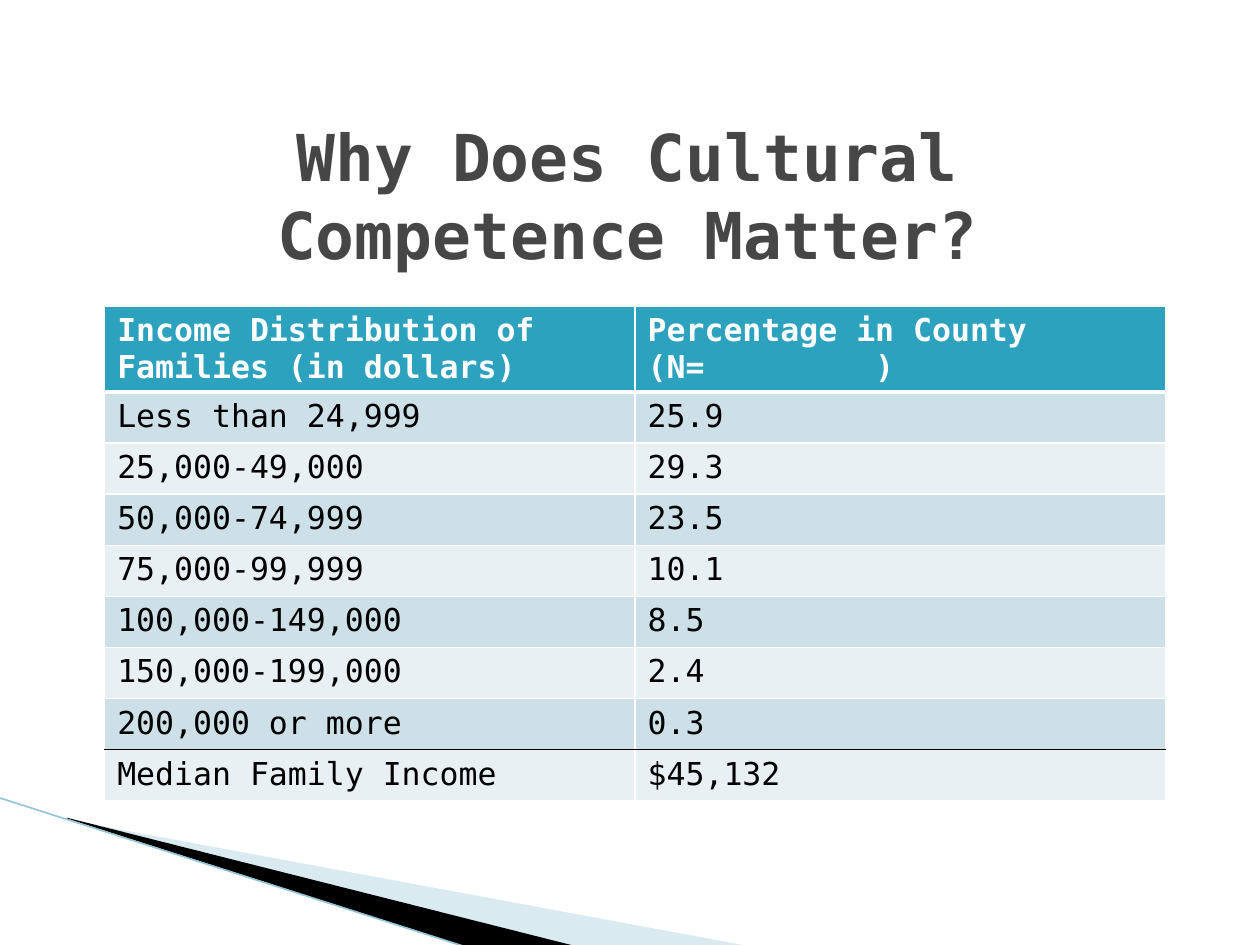
"""Build a slide with a table of family income by share of county."""

import dataclasses
import typing

import lxml.etree
import pptx
import pptx.dml.color
import pptx.enum.shapes
import pptx.enum.text
import pptx.oxml.ns
import pptx.util

Pt = pptx.util.Pt
qn = pptx.oxml.ns.qn
FONT = "DejaVu Sans Mono"
HUES = {
    "head": "2DA2BF",
    "dark": "CDE0E8",
    "light": "E8F0F4",
    "white": "FFFFFF",
    "black": "000000",
    "title": "464646",
    "pale": "A0CBDC",
    "line": "97C5D8",
}
HEADS = ("Income Distribution of Families (in dollars)", "Percentage in County\n(N=\t)")
ROWS = (
    ("Less than 24,999", "25.9"),
    ("25,000-49,000", "29.3"),
    ("50,000-74,999", "23.5"),
    ("75,000-99,999", "10.1"),
    ("100,000-149,000", "8.5"),
    ("150,000-199,000", "2.4"),
    ("200,000 or more", "0.3"),
    ("Median Family Income", "$45,132"),
)


@dataclasses.dataclass(frozen=True)
class Wedge:
    """A filled outline, with its points and its opacity in percent."""

    points: tuple
    hue: str
    alpha: int = 100


@dataclasses.dataclass(frozen=True)
class Edge:
    """A cell border: its side, hue and width in points."""

    side: str
    hue: str = "white"
    width: float = 1


WEDGES = (
    Wedge(((39.6, 468.7), (428.4, 540.7), (328.3, 540.7), (39.6, 468)), "pale", 40),
    Wedge(((38.2, 467.3), (329, 540.7), (267.8, 541.4), (38.9, 468)), "black"),
)


def tint(name: str) -> pptx.dml.color.RGBColor:
    """Return the named hue."""
    return pptx.dml.color.RGBColor.from_string(HUES[name])


def write(frame: typing.Any, text: str, *, size: float, hue: str, bold: bool = False,
          align: typing.Any = None, tab: float = 0) -> None:
    """Fill a text frame, one paragraph to a line."""
    frame.text = text
    for para in frame.paragraphs:
        if align is not None:
            para.alignment = align
        if tab:
            stops = lxml.etree.SubElement(para._p.get_or_add_pPr(), qn("a:tabLst"))
            lxml.etree.SubElement(stops, qn("a:tab"), pos=str(Pt(tab)), algn="l")
        for run in para.runs:
            font = run.font
            font.name, font.size, font.bold = FONT, Pt(size), bold
            font.color.rgb = tint(hue)


def draw_wedge(slide: typing.Any, wedge: Wedge) -> None:
    """Draw one filled wedge."""
    first, *rest = [(Pt(x), Pt(y)) for x, y in wedge.points]
    pen = slide.shapes.build_freeform(*first)
    pen.add_line_segments(rest, close=True)
    shape = pen.convert_to_shape()
    shape.shadow.inherit = False
    shape.fill.solid()
    shape.fill.fore_color.rgb = tint(wedge.hue)
    shape.line.fill.background()
    if wedge.alpha < 100:
        shade = shape._element.spPr.find(".//" + qn("a:srgbClr"))
        lxml.etree.SubElement(shade, qn("a:alpha"), val=str(wedge.alpha * 1000))


def draw_line(slide: typing.Any) -> None:
    """Draw the thin line along the wedges."""
    kind = pptx.enum.shapes.MSO_CONNECTOR.STRAIGHT
    line = slide.shapes.add_connector(kind, Pt(-0.7), Pt(455.8), Pt(267.1), Pt(541.4))
    line.line.width = Pt(0.95)
    line.line.color.rgb = tint("line")
    lxml.etree.SubElement(line._element.spPr, qn("a:effectLst"))


def draw_edge(cell: typing.Any, edge: Edge) -> None:
    """Add one border to a cell."""
    props = cell._tc.get_or_add_tcPr()
    line = lxml.etree.SubElement(props, qn("a:ln" + edge.side), w=str(Pt(edge.width)))
    fill = lxml.etree.SubElement(line, qn("a:solidFill"))
    lxml.etree.SubElement(fill, qn("a:srgbClr"), val=HUES[edge.hue])


def draw_table(slide: typing.Any) -> None:
    """Draw the income table."""
    lines = (HEADS, *ROWS)
    last = len(ROWS)
    table = slide.shapes.add_table(
        len(lines), 2, Pt(59.8), Pt(175), Pt(606.2), Pt(283.7)).table
    for column in table.columns:
        column.width = Pt(303.1)
    for i, line in enumerate(lines):
        head = i == 0
        table.rows[i].height = Pt(47.7 if head else 29.2)
        top = Edge("T", "black" if i == last else "white", 3 if i == 1 else 1)
        base = Edge("B", "black" if i == last - 1 else "white", 3 if head else 1)
        for j, text in enumerate(line):
            cell = table.cell(i, j)
            for edge in (Edge("L"), Edge("R"), top, base):
                draw_edge(cell, edge)
            cell.fill.solid()
            cell.fill.fore_color.rgb = tint("head" if head else "dark" if i % 2 else "light")
            write(cell.text_frame, text, size=18, hue="white" if head else "black",
                  bold=head, tab=130 if "\t" in text else 0)


def draw_title(slide: typing.Any) -> None:
    """Place and format the title."""
    title = slide.shapes.title
    title.left, title.top = Pt(82.1), Pt(66.2)
    title.width, title.height = Pt(553), Pt(90)
    frame = title.text_frame
    frame.word_wrap = True
    frame.auto_size = pptx.enum.text.MSO_AUTO_SIZE.NONE
    frame.vertical_anchor = pptx.enum.text.MSO_ANCHOR.MIDDLE
    write(frame, "Why Does Cultural Competence Matter?", size=36.9, hue="title",
          bold=True, align=pptx.enum.text.PP_ALIGN.CENTER)


def main() -> None:
    """Build and save the slide."""
    deck = pptx.Presentation()
    deck.slide_width, deck.slide_height = Pt(720), Pt(540)
    slide = deck.slides.add_slide(deck.slide_layouts.get_by_name("Title Only"))
    for wedge in WEDGES:
        draw_wedge(slide, wedge)
    draw_line(slide)
    draw_title(slide)
    draw_table(slide)
    deck.save("out.pptx")


if __name__ == "__main__":
    main()
